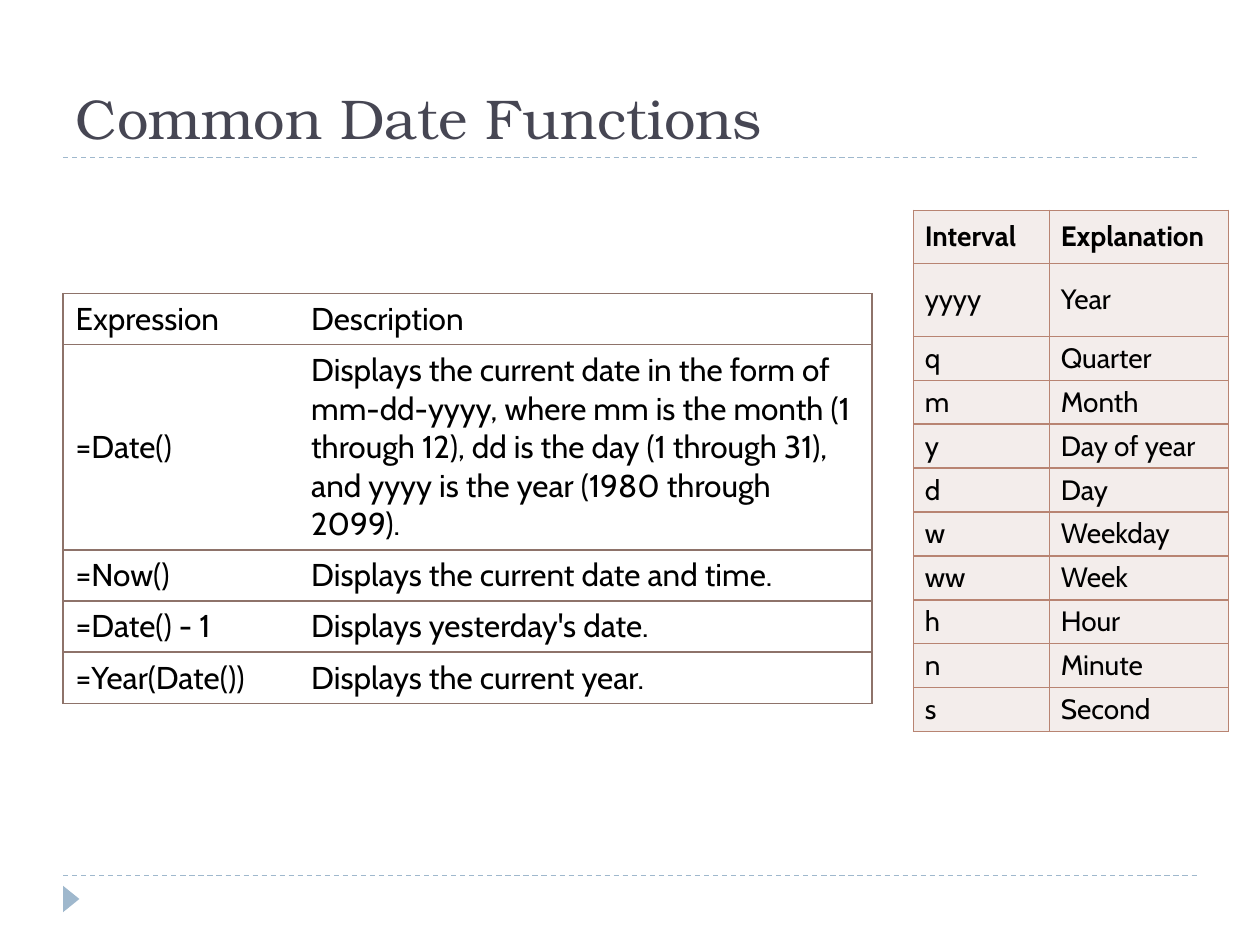
from dataclasses import dataclass

from lxml.etree import SubElement
from pptx import Presentation
from pptx.dml.color import RGBColor
from pptx.enum.dml import MSO_LINE
from pptx.enum.shapes import MSO_CONNECTOR, MSO_SHAPE
from pptx.enum.text import MSO_ANCHOR, PP_ALIGN
from pptx.oxml import parse_xml
from pptx.oxml.ns import nsdecls, qn
from pptx.util import Inches, Pt


@dataclass(frozen=True)
class Theme:
    """Colours, fonts and type sizes of the slide."""
    title_font: str = "TeX Gyre Bonum"
    body_font: str = "Cabin"
    title_size: int = 32
    expression_size: int = 18
    interval_size: int = 16
    title: str = "464653"
    text: str = "000000"
    accent: str = "9FB8CD"
    expression_border: str = "8E736A"
    expression_fill: str = "FFFFFF"
    interval_border: str = "B88472"
    interval_fill: str = "F3EDEB"


THEME = Theme()
WIDTH, HEIGHT = 10, 7.5
MARGIN = WIDTH * 0.05
CONTENT_WIDTH = WIDTH - 2 * MARGIN
TITLE_RULE, FOOTER_RULE = 1.25, 6.95

EXPRESSIONS = [
    ("Expression", "Description"),
    ("=Date()", "Displays the current date in the form of mm-dd-yyyy, where mm is the month "
                "(1 through 12), dd is the day (1 through 31), and yyyy is the year "
                "(1980 through 2099)."),
    ("=Now()", "Displays the current date and time."),
    ("=Date() - 1", "Displays yesterday's date."),
    ("=Year(Date())", "Displays the current year."),
]
INTERVALS = [
    ("Interval", "Explanation"),
    ("yyyy", "Year"),
    ("q", "Quarter"),
    ("m", "Month"),
    ("y", "Day of year"),
    ("d", "Day"),
    ("w", "Weekday"),
    ("ww", "Week"),
    ("h", "Hour"),
    ("n", "Minute"),
    ("s", "Second"),
]


def style_font(font, name, size, color, bold=False):
    """Set the typeface, size, colour and weight of a font."""
    font.name, font.size, font.bold = name, Pt(size), bold
    font.color.rgb = RGBColor.from_string(color)


def add_title(slide, text):
    """Place the title just above the upper rule."""
    title = slide.shapes.title
    top = 0.17
    title.left, title.top = Inches(MARGIN), Inches(top)
    title.width, title.height = Inches(CONTENT_WIDTH), Inches(TITLE_RULE - top)
    title.text_frame.text = text
    title.text_frame.vertical_anchor = MSO_ANCHOR.BOTTOM
    paragraph = title.text_frame.paragraphs[0]
    paragraph.alignment = PP_ALIGN.LEFT
    style_font(paragraph.font, THEME.title_font, THEME.title_size, THEME.title)


def add_rule(slide, top):
    """Draw a dashed rule between the margins."""
    rule = slide.shapes.add_connector(
        MSO_CONNECTOR.STRAIGHT, Inches(MARGIN), Inches(top), Inches(WIDTH - MARGIN), Inches(top))
    rule.line.color.rgb = RGBColor.from_string(THEME.accent)
    rule.line.width = Pt(0.75)
    rule.line.dash_style = MSO_LINE.DASH
    SubElement(rule.element.spPr, qn("a:effectLst"))


def add_footer_marker(slide):
    """Draw the triangle that points right below the lower rule."""
    marker = slide.shapes.add_shape(
        MSO_SHAPE.ISOSCELES_TRIANGLE, Inches(0.46), Inches(7.07), Inches(0.21), Inches(0.13))
    marker.rotation = 90
    marker.shadow.inherit = False
    marker.fill.solid()
    marker.fill.fore_color.rgb = RGBColor.from_string(THEME.accent)
    marker.line.fill.background()


def set_borders(cell, sides, color):
    """Give the named sides a one-point line and the others none."""
    properties = cell._tc.get_or_add_tcPr()
    for index, side in enumerate("LRTB"):
        fill = (f'<a:solidFill><a:srgbClr val="{color}"/></a:solidFill>'
                if side in sides else "<a:noFill/>")
        properties.insert(index, parse_xml(
            f'<a:ln{side} {nsdecls("a")} w="{Pt(1)}">{fill}</a:ln{side}>'))


def add_grid(slide, rows, left, top, columns, heights, size, fill, border,
             sides, insets, bold_header=False):
    """Add a table whose columns each have their own set of bordered sides."""
    frame = slide.shapes.add_table(
        len(rows), len(columns), Inches(left), Inches(top),
        Inches(sum(columns)), Inches(sum(heights)))
    table = frame.table
    table.first_row = table.horz_banding = False
    for column, width in zip(table.columns, columns):
        column.width = Inches(width)
    for row_index, (values, height) in enumerate(zip(rows, heights)):
        table.rows[row_index].height = Inches(height)
        for column_index, value in enumerate(values):
            cell = table.cell(row_index, column_index)
            cell.text = value
            cell.vertical_anchor = MSO_ANCHOR.MIDDLE
            cell.margin_left = cell.margin_right = Inches(insets[0])
            cell.margin_top = cell.margin_bottom = Inches(insets[1])
            cell.fill.solid()
            cell.fill.fore_color.rgb = RGBColor.from_string(fill)
            set_borders(cell, sides[column_index], border)
            style_font(cell.text_frame.paragraphs[0].font, THEME.body_font, size, THEME.text,
                       bold_header and row_index == 0)


def main():
    """Build and save the slide."""
    presentation = Presentation()
    presentation.slide_width, presentation.slide_height = Inches(WIDTH), Inches(HEIGHT)
    slide = presentation.slides.add_slide(presentation.slide_layouts[5])
    for top in (FOOTER_RULE, TITLE_RULE):
        add_rule(slide, top)
    add_footer_marker(slide)
    add_title(slide, "Common Date Functions")
    add_grid(slide, EXPRESSIONS, MARGIN, 2.33, (1.87, 4.55), [0.4, 1.63] + [0.4] * 3,
             THEME.expression_size, THEME.expression_fill, THEME.expression_border,
             ("LTB", "TRB"), (0.1, 0.05))
    add_grid(slide, INTERVALS, 7.25, 1.67, (1.08, 1.42), [0.42, 0.58] + [0.33] * 9,
             THEME.interval_size, THEME.interval_fill, THEME.interval_border,
             ("LRTB", "LRTB"), (0.09, 0.04), bold_header=True)
    presentation.save("out.pptx")


if __name__ == "__main__":
    main()
